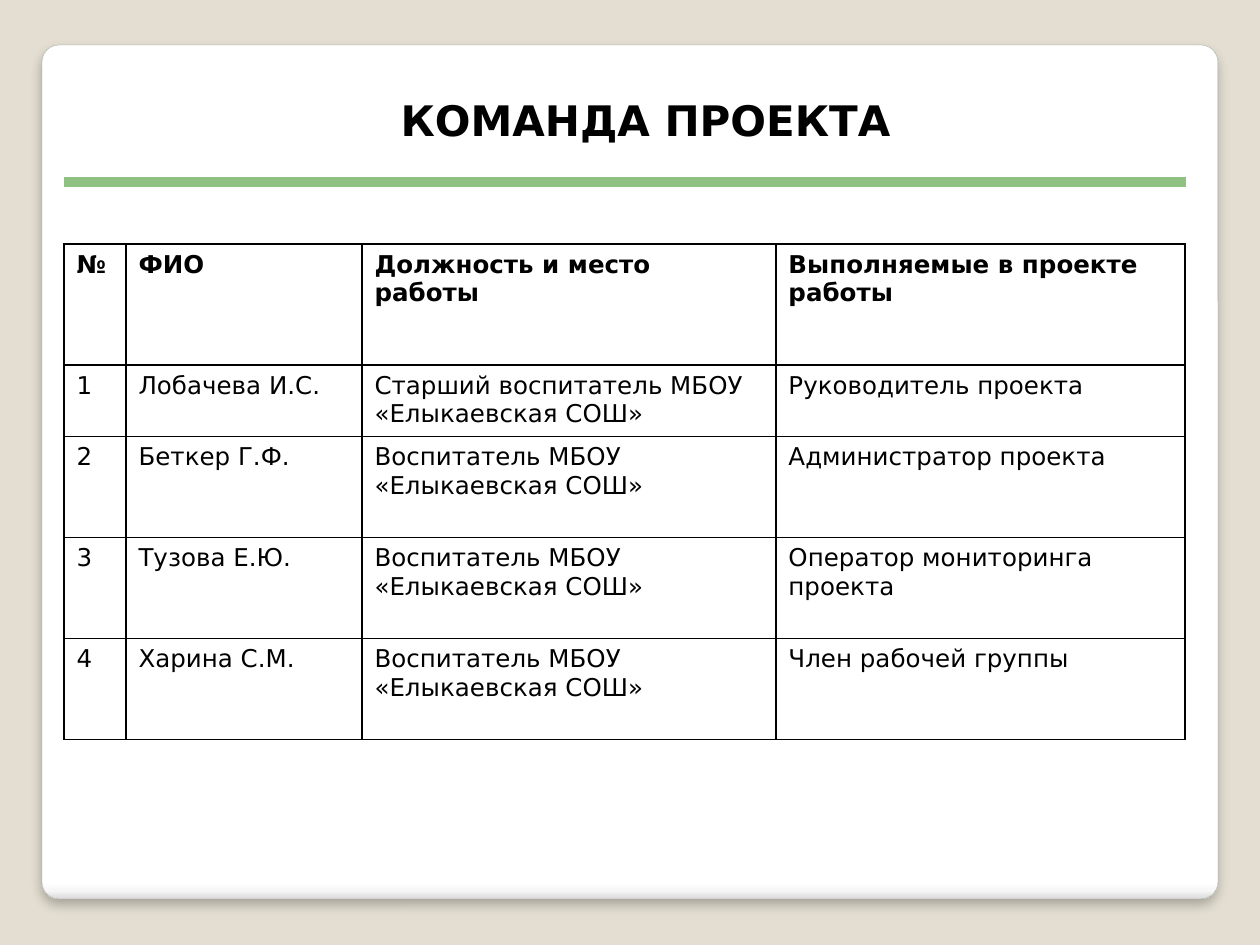
from lxml.etree import SubElement
from pptx import Presentation
from pptx.dml.color import RGBColor as RGB
from pptx.enum.shapes import MSO_CONNECTOR as CONN, MSO_SHAPE as SHAPE
from pptx.enum.text import PP_ALIGN as ALIGN
from pptx.oxml import parse_xml
from pptx.oxml.ns import nsdecls, qn
from pptx.util import Pt

PX = 914400 // 126
FONT = "DejaVu Sans"
COLORS = {"bg": "E3DED1", "white": "FFFFFF", "edge": "A4A4A4",
          "text": "000000", "rule": "8EC182"}


def write(tf, text, size=14, bold=False, align=ALIGN.LEFT):
    p = tf.paragraphs[0]
    p.alignment = align
    r = p.add_run()
    r.text = text
    r.font.name, r.font.size, r.font.bold = FONT, Pt(size), bold
    r.font.color.rgb = RGB.from_string(COLORS["text"])


def set_borders(cell):
    tcPr = cell._tc.get_or_add_tcPr()
    for i, side in enumerate(("lnL", "lnR", "lnT", "lnB")):
        tcPr.insert(i, parse_xml(
            f'<a:{side} {nsdecls("a")} w="{Pt(1)}"><a:solidFill>'
            f'<a:srgbClr val="{COLORS["text"]}"/></a:solidFill></a:{side}>'))


prs = Presentation()
prs.slide_width, prs.slide_height = 1260 * PX, 945 * PX
s = prs.slides.add_slide(prs.slide_layouts[6])
s.background.fill.solid()
s.background.fill.fore_color.rgb = RGB.from_string(COLORS["bg"])

# Rounded panel with a shaded lower edge
sp = s.shapes.add_shape(SHAPE.ROUNDED_RECTANGLE, 42 * PX, 45 * PX, 1176 * PX, 854 * PX)
sp.adjustments[0] = 0.02
sp.line.color.rgb = RGB.from_string(COLORS["edge"])
sp.line.width = Pt(0.16)
sp.fill.gradient()
sp.fill.gradient_angle = 270
stops = sp._element.spPr.find(".//" + qn("a:gsLst"))
for stop in list(stops):
    stops.remove(stop)
for pos, color in ((0, "FFFFFF"), (98, "FFFFFF"), (99, "F7F7F7"), (100, "DADADA")):
    gs = SubElement(stops, qn("a:gs"), pos=str(pos * 1000))
    SubElement(gs, qn("a:srgbClr"), val=color)

# Panel shadow
sp.shadow.inherit = False
sp._element.spPr.find(qn("a:effectLst")).append(parse_xml(
    f'<a:outerShdw {nsdecls("a")} blurRad="{Pt(6)}" dist="{Pt(4)}" dir="5400000" '
    f'rotWithShape="0"><a:srgbClr val="{COLORS["text"]}"><a:alpha val="25000"/>'
    '</a:srgbClr></a:outerShdw>'))

# Title
tf = s.shapes.add_textbox(105 * PX, 88 * PX, 1081 * PX, 63 * PX).text_frame
tf.word_wrap = True
write(tf, "КОМАНДА ПРОЕКТА", size=24, bold=True, align=ALIGN.CENTER)

# Team table
teacher = "Воспитатель МБОУ «Елыкаевская СОШ»"
rows = [
    ("№", "ФИО", "Должность и место работы", "Выполняемые в проекте работы"),
    ("1", "Лобачева И.С.", "Старший воспитатель МБОУ «Елыкаевская СОШ»",
     "Руководитель проекта"),
    ("2", "Беткер Г.Ф.", teacher, "Администратор проекта"),
    ("3", "Тузова Е.Ю.", teacher, "Оператор мониторинга проекта"),
    ("4", "Харина С.М.", teacher, "Член рабочей группы"),
]
widths = [62, 236, 414, 409]
heights = [121, 71, 101, 101, 101]
table = s.shapes.add_table(len(rows), len(widths), 64 * PX, 244 * PX,
                           sum(widths) * PX, sum(heights) * PX).table
for col, width in zip(table.columns, widths):
    col.width = width * PX
for i, (row, height) in enumerate(zip(rows, heights)):
    table.rows[i].height = height * PX
    for j, text in enumerate(row):
        cell = table.cell(i, j)
        cell.fill.background()
        set_borders(cell)
        write(cell.text_frame, text, bold=i == 0)

# Green rule under the title
rule = s.shapes.add_connector(CONN.STRAIGHT, 64 * PX, 182 * PX, 1186 * PX, 182 * PX)
rule.line.color.rgb = RGB.from_string(COLORS["rule"])
rule.line.width = Pt(6)
SubElement(rule._element.spPr, qn("a:effectLst"))

prs.save("out.pptx")
